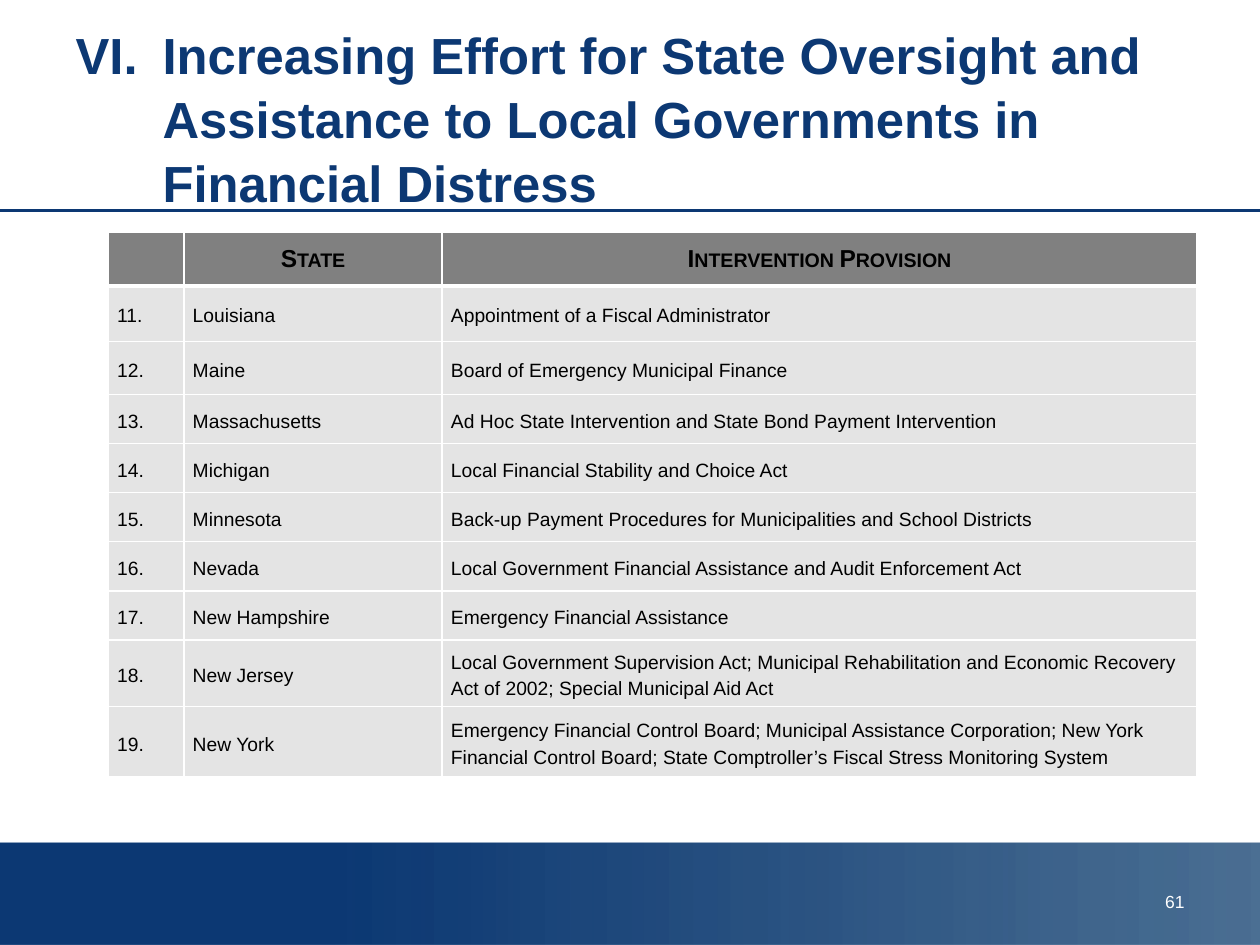
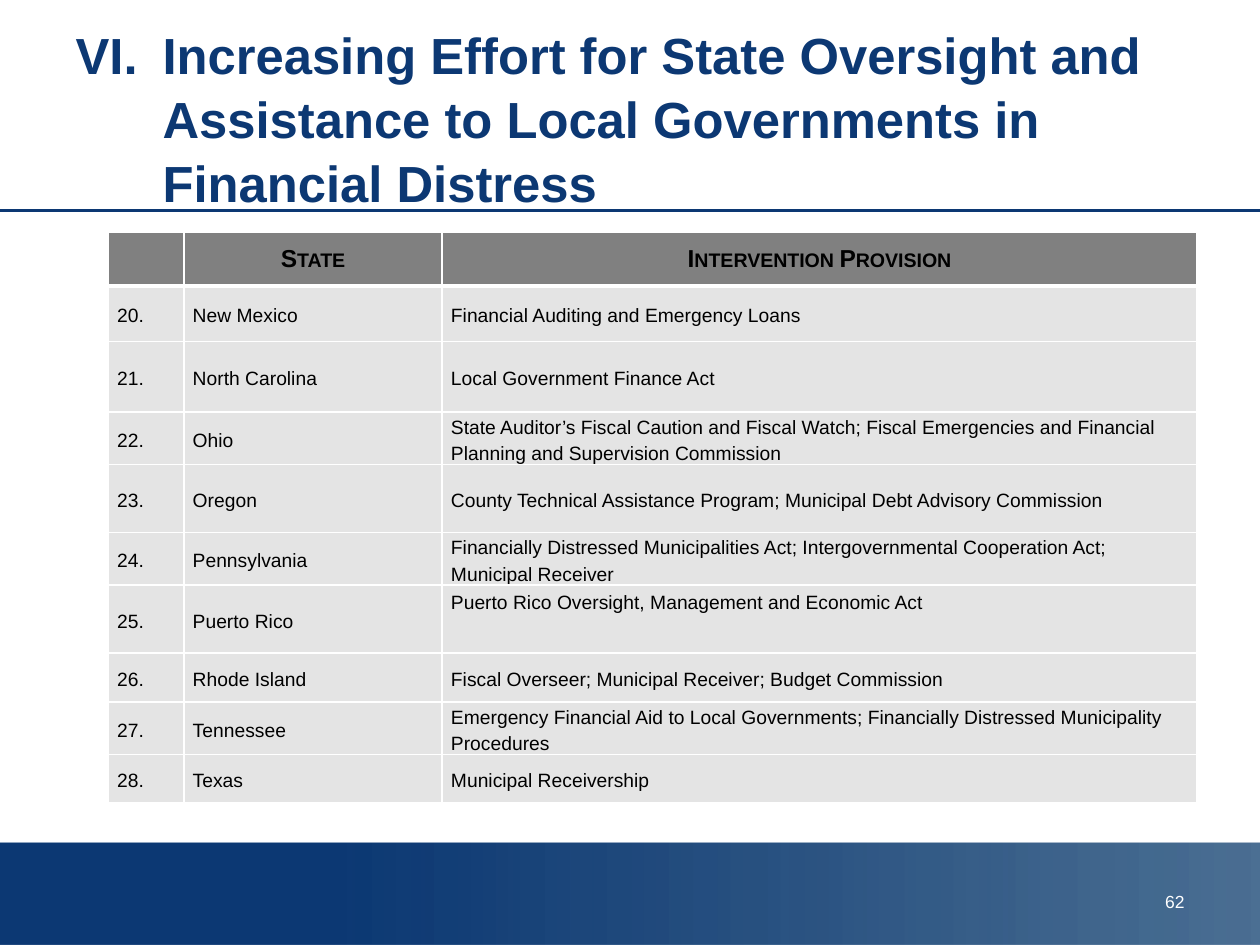
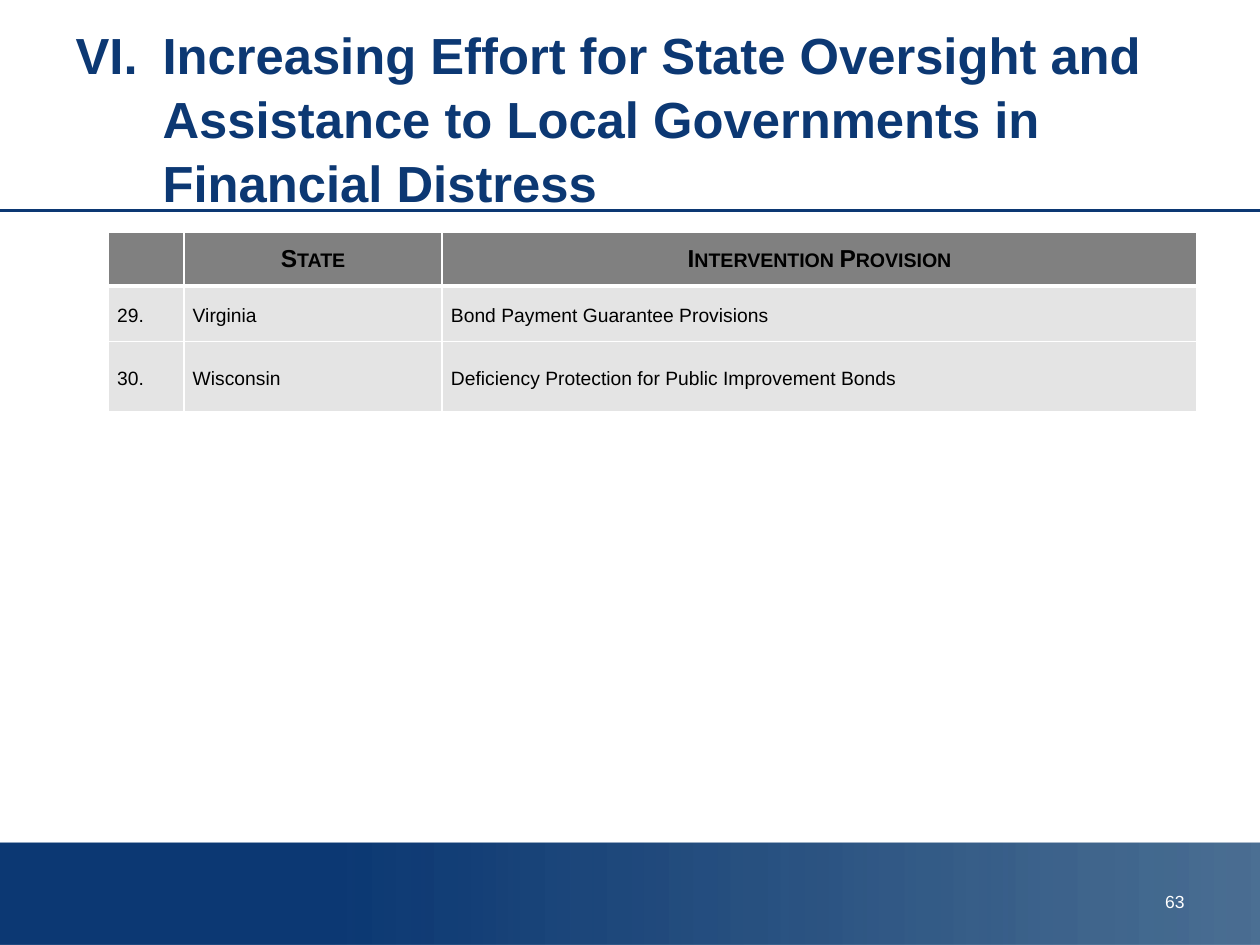
from dataclasses import dataclass

from lxml import etree
from pptx import Presentation
from pptx.dml.color import RGBColor
from pptx.enum.shapes import MSO_CONNECTOR, MSO_SHAPE
from pptx.enum.text import MSO_ANCHOR, MSO_AUTO_SIZE, PP_ALIGN
from pptx.oxml.ns import qn
from pptx.util import Inches, Pt

RECTANGLE = MSO_SHAPE.RECTANGLE
STRAIGHT = MSO_CONNECTOR.STRAIGHT
TOP, MIDDLE = MSO_ANCHOR.TOP, MSO_ANCHOR.MIDDLE
NO_AUTOFIT = MSO_AUTO_SIZE.NONE
LEFT, CENTER, RIGHT = PP_ALIGN.LEFT, PP_ALIGN.CENTER, PP_ALIGN.RIGHT

COLORS = {
    "navy": "0C3873",
    "band_end": "003366",
    "header": "808080",
    "row": "E4E4E4",
    "text": "000000",
    "white": "FFFFFF",
}
FONT = "Arial"
TITLE = (
    "VI.\tIncreasing Effort for State Oversight and Assistance "
    "to Local Governments in Financial Distress"
)
HEADINGS = ("", "State", "Intervention Provision")
COLUMN_WIDTHS = (0.6, 2.05, 5.99)
HEADER_HEIGHT = 0.43
FIRST_PAGE = 61
FIRST_STATE = 11
TITLE_ONLY = 5


@dataclass(frozen=True)
class StateRow:
    state: str
    provision: str
    height: float = 0.39
    anchor: MSO_ANCHOR = MIDDLE


PAGES = (
    (
        StateRow("Louisiana", "Appointment of a Fiscal Administrator", 0.44),
        StateRow("Maine", "Board of Emergency Municipal Finance", 0.42),
        StateRow("Massachusetts", "Ad Hoc State Intervention and State Bond Payment Intervention"),
        StateRow("Michigan", "Local Financial Stability and Choice Act"),
        StateRow("Minnesota", "Back-up Payment Procedures for Municipalities and School Districts"),
        StateRow("Nevada", "Local Government Financial Assistance and Audit Enforcement Act"),
        StateRow("New Hampshire", "Emergency Financial Assistance"),
        StateRow(
            "New Jersey",
            "Local Government Supervision Act; Municipal Rehabilitation and Economic "
            "Recovery Act of 2002; Special Municipal Aid Act",
            0.53,
        ),
        StateRow(
            "New York",
            "Emergency Financial Control Board; Municipal Assistance Corporation; New York "
            "Financial Control Board; State Comptroller’s Fiscal Stress Monitoring System",
            0.56,
        ),
    ),
    (
        StateRow("New Mexico", "Financial Auditing and Emergency Loans", 0.44),
        StateRow("North Carolina", "Local Government Finance Act", 0.56),
        StateRow(
            "Ohio",
            "State Auditor’s Fiscal Caution and Fiscal Watch; Fiscal Emergencies and "
            "Financial Planning and Supervision Commission",
        ),
        StateRow(
            "Oregon",
            "County Technical Assistance Program; Municipal Debt Advisory Commission",
            0.54,
        ),
        StateRow(
            "Pennsylvania",
            "Financially Distressed Municipalities Act; Intergovernmental Cooperation Act; "
            "Municipal Receiver",
        ),
        StateRow("Puerto Rico", "Puerto Rico Oversight, Management and Economic Act", 0.54, TOP),
        StateRow("Rhode Island", "Fiscal Overseer; Municipal Receiver; Budget Commission"),
        StateRow(
            "Tennessee",
            "Emergency Financial Aid to Local Governments; Financially Distressed "
            "Municipality Procedures",
            0.35,
        ),
        StateRow("Texas", "Municipal Receivership", 0.38),
    ),
    (
        StateRow("Virginia", "Bond Payment Guarantee Provisions", 0.44),
        StateRow("Wisconsin", "Deficiency Protection for Public Improvement Bonds", 0.56),
    ),
)


def rgb(name: str) -> RGBColor:
    return RGBColor.from_string(COLORS[name])


def set_font(font, size: float, color: str, bold: bool = False) -> None:
    font.name = FONT
    font.size = Pt(size)
    font.bold = bold
    font.color.rgb = rgb(color)


def add_title(slide) -> None:
    title = slide.shapes.title
    title.left, title.top = Inches(0.5), Inches(0.3)
    title.width, title.height = Inches(9), Inches(1.25)
    frame = title.text_frame
    frame.text = TITLE
    frame.word_wrap = True
    frame.auto_size = NO_AUTOFIT
    frame.vertical_anchor = MIDDLE
    paragraph = frame.paragraphs[0]
    paragraph.alignment = LEFT
    paragraph.line_spacing = 1.05
    properties = paragraph._p.get_or_add_pPr()
    properties.set("marL", str(Inches(0.69)))
    properties.set("indent", str(-Inches(0.69)))
    set_font(paragraph.runs[0].font, 29, "navy", True)


def add_band(slide) -> None:
    band = slide.shapes.add_shape(RECTANGLE, 0, Inches(6.69), Inches(10.02), Inches(0.81))
    band.shadow.inherit = False
    band.line.fill.background()
    band.fill.gradient()
    band.fill.gradient_angle = 0
    start, end = band.fill.gradient_stops
    start.position, start.color.rgb = 0.25, rgb("navy")
    end.position, end.color.rgb = 1, rgb("band_end")
    end_color = list(band.element.iter(qn("a:srgbClr")))[-1]
    etree.SubElement(end_color, qn("a:alpha"), val="70000")


def add_title_rule(slide) -> None:
    rule = slide.shapes.add_connector(STRAIGHT, 0, Inches(1.67), Inches(10), Inches(1.67))
    rule.line.color.rgb = rgb("navy")
    rule.line.width = Pt(2)
    etree.SubElement(rule.element.spPr, qn("a:effectLst"))


def add_page_number(slide, number: int) -> None:
    box = slide.shapes.add_textbox(Inches(7.17), Inches(7.02), Inches(2.33), Inches(0.4))
    box.text_frame.word_wrap = True
    box.text_frame.text = str(number)
    paragraph = box.text_frame.paragraphs[0]
    paragraph.alignment = RIGHT
    set_font(paragraph.runs[0].font, 10, "white")


def set_borders(cell, top: float = 1, bottom: float = 1) -> None:
    properties = cell._tc.get_or_add_tcPr()
    sides = (("L", 1), ("R", 1), ("T", top), ("B", bottom))
    for index, (side, width) in enumerate(sides):
        border = etree.Element(qn(f"a:ln{side}"), w=str(Pt(width)))
        fill = etree.SubElement(border, qn("a:solidFill"))
        etree.SubElement(fill, qn("a:srgbClr"), val=COLORS["white"])
        properties.insert(index, border)


def fill_cell(cell, text: str, color: str) -> None:
    cell.fill.solid()
    cell.fill.fore_color.rgb = rgb(color)
    cell.vertical_anchor = MIDDLE
    cell.text_frame.text = text


def add_heading(cell, text: str) -> None:
    fill_cell(cell, text, "header")
    set_borders(cell, bottom=3)
    paragraph = cell.text_frame.paragraphs[0]
    paragraph.alignment = CENTER
    for run in paragraph.runs:
        set_font(run.font, 14, "text", True)
        run._r.get_or_add_rPr().set("cap", "small")


def add_entry(cell, text: str, below_header: bool) -> None:
    fill_cell(cell, text, "row")
    set_borders(cell, top=3 if below_header else 1)
    cell.margin_left = cell.margin_right = Inches(0.07)
    cell.margin_top = cell.margin_bottom = 0
    paragraph = cell.text_frame.paragraphs[0]
    paragraph.line_spacing = Pt(15)
    paragraph.space_after = Pt(4)
    set_font(paragraph.runs[0].font, 11, "text")


def add_state_table(slide, states: tuple[StateRow, ...], first_number: int) -> None:
    heights = [HEADER_HEIGHT] + [entry.height for entry in states]
    table = slide.shapes.add_table(
        len(heights), len(HEADINGS), Inches(0.86), Inches(1.84),
        Inches(sum(COLUMN_WIDTHS)), Inches(sum(heights)),
    ).table
    for column, width in zip(table.columns, COLUMN_WIDTHS):
        column.width = Inches(width)
    for row, height in zip(table.rows, heights):
        row.height = Inches(height)
    for column, heading in enumerate(HEADINGS):
        add_heading(table.cell(0, column), heading)
    for row, entry in enumerate(states, start=1):
        number = f"{first_number + row - 1}."
        for column, text in enumerate((number, entry.state, entry.provision)):
            add_entry(table.cell(row, column), text, row == 1)
        provision_cell = table.cell(row, len(HEADINGS) - 1)
        provision_cell.vertical_anchor = entry.anchor
        if entry.anchor == TOP:
            provision_cell.margin_top = Inches(0.02)


def main() -> None:
    presentation = Presentation()
    presentation.slide_width, presentation.slide_height = Inches(10), Inches(7.5)
    first_number = FIRST_STATE
    for page, states in enumerate(PAGES, start=FIRST_PAGE):
        slide = presentation.slides.add_slide(presentation.slide_layouts[TITLE_ONLY])
        add_band(slide)
        add_title_rule(slide)
        add_page_number(slide, page)
        add_state_table(slide, states, first_number)
        add_title(slide)
        first_number += len(states)
    presentation.save("out.pptx")


if __name__ == "__main__":
    main()
